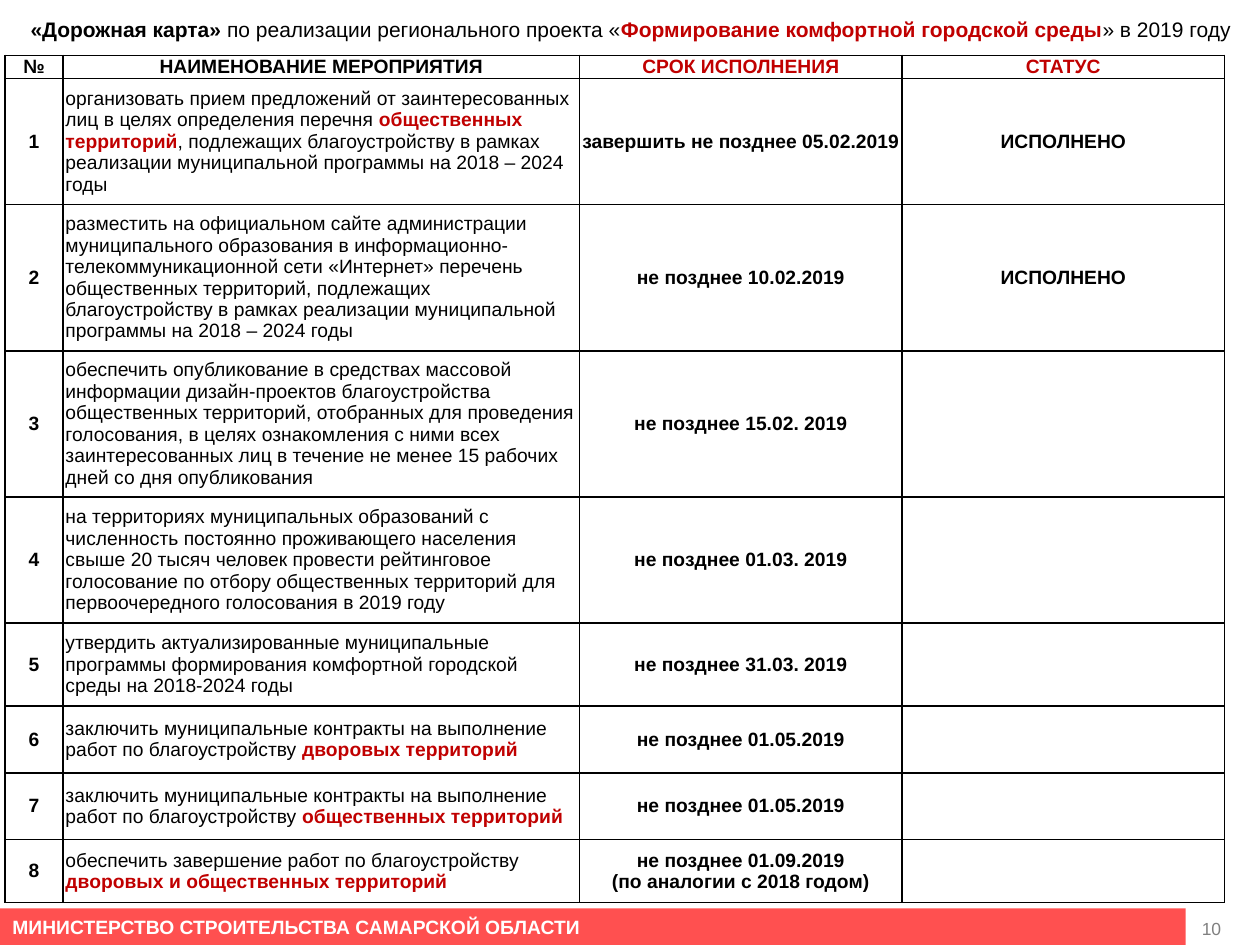
import pptx
import pptx.dml.color
import pptx.enum.shapes
import pptx.enum.text
import pptx.oxml
import pptx.oxml.ns
import pptx.util
from pptx.util import Inches

COLORS = {"black": "000000", "red": "C00000", "white": "FFFFFF", "banner": "FF5050", "gray": "808080"}
ALIGN = pptx.enum.text.PP_ALIGN
ANCHOR = pptx.enum.text.MSO_ANCHOR


def rgb(name):
    return pptx.dml.color.RGBColor.from_string(COLORS[name])


def add_span(para, text, size=11, color="black", bold=False, align=None):
    if align is not None:
        para.alignment = align
    span = para.add_run()
    span.text = text
    span.font.name = "Arial"
    span.font.size = pptx.util.Pt(size)
    span.font.bold = bold
    span.font.color.rgb = rgb(color)


deck = pptx.Presentation()
deck.slide_width = Inches(10)
deck.slide_height = Inches(7.5)
page = deck.slides.add_slide(deck.slide_layouts[6])

number_box = page.shapes.add_textbox(Inches(9.44), Inches(7.1), Inches(0.56), Inches(0.4))
number_box.text_frame.word_wrap = True
number_box.text_frame.vertical_anchor = ANCHOR.BOTTOM
add_span(number_box.text_frame.paragraphs[0], "10", size=10, color="gray")

banner = page.shapes.add_shape(
    pptx.enum.shapes.MSO_SHAPE.RECTANGLE, Inches(0), Inches(7.21), Inches(9.41), Inches(0.29))
banner.shadow.inherit = False
banner.fill.solid()
banner.fill.fore_color.rgb = rgb("banner")
banner.line.fill.background()
banner.text_frame.vertical_anchor = ANCHOR.MIDDLE
add_span(banner.text_frame.paragraphs[0], "МИНИСТЕРСТВО СТРОИТЕЛЬСТВА САМАРСКОЙ ОБЛАСТИ",
         color="white", bold=True, align=ALIGN.LEFT)

headers = ["№", "НАИМЕНОВАНИЕ МЕРОПРИЯТИЯ", "СРОК ИСПОЛНЕНИЯ", "СТАТУС"]
contracts = "заключить муниципальные контракты на выполнение работ по благоустройству "
# Vertical bars enclose the highlighted words.
tasks = [
    ("организовать прием предложений от заинтересованных лиц в целях определения перечня "
     "|общественных территорий|, подлежащих благоустройству в рамках реализации "
     "муниципальной программы на 2018 – 2024 годы",
     "завершить не позднее 05.02.2019", "ИСПОЛНЕНО"),
    ("разместить на официальном сайте администрации муниципального образования в "
     "информационно-телекоммуникационной сети «Интернет» перечень общественных территорий, "
     "подлежащих благоустройству в рамках реализации муниципальной программы на 2018 – 2024 годы",
     "не позднее 10.02.2019", "ИСПОЛНЕНО"),
    ("обеспечить опубликование в средствах массовой информации дизайн-проектов благоустройства "
     "общественных территорий, отобранных для проведения голосования, в целях ознакомления с ними "
     "всех заинтересованных лиц в течение не менее 15 рабочих дней со дня опубликования",
     "не позднее 15.02. 2019", ""),
    ("на территориях муниципальных образований с численность постоянно проживающего населения "
     "свыше 20 тысяч человек провести рейтинговое голосование по отбору общественных территорий "
     "для первоочередного голосования в 2019 году",
     "не позднее 01.03. 2019", ""),
    ("утвердить актуализированные муниципальные программы формирования комфортной городской "
     "среды на 2018-2024 годы",
     "не позднее 31.03. 2019", ""),
    (contracts + "|дворовых территорий", "не позднее 01.05.2019", ""),
    (contracts + "|общественных территорий", "не позднее 01.05.2019", ""),
    ("обеспечить завершение работ по благоустройству |дворовых и общественных территорий",
     "не позднее 01.09.2019\n(по аналогии с 2018 годом)", ""),
]
rows = [headers] + [[str(index), *task] for index, task in enumerate(tasks, 1)]
column_widths = [0.46, 4.1, 2.56, 2.56]
row_heights = [0.18, 1, 1.16, 1.16, 1, 0.66, 0.53, 0.53, 0.5]

table = page.shapes.add_table(len(rows), len(headers), Inches(0.04), Inches(0.44),
                              Inches(sum(column_widths)), Inches(sum(row_heights))).table
for column, width in zip(table.columns, column_widths):
    column.width = Inches(width)
for row, height in zip(table.rows, row_heights):
    row.height = Inches(height)

for row_index, row in enumerate(rows):
    for column_index, text in enumerate(row):
        cell = table.cell(row_index, column_index)
        cell.vertical_anchor = ANCHOR.MIDDLE
        cell.margin_left = cell.margin_right = Inches(0.02)
        cell.margin_top = cell.margin_bottom = 0
        properties = cell._tc.get_or_add_tcPr()
        for side in ("lnL", "lnR", "lnT", "lnB"):
            properties.append(pptx.oxml.parse_xml(
                f'<a:{side} {pptx.oxml.ns.nsdecls("a")} w="12700"><a:solidFill>'
                f'<a:srgbClr val="{COLORS["black"]}"/></a:solidFill></a:{side}>'))
        cell.fill.solid()
        cell.fill.fore_color.rgb = rgb("white")
        is_header = row_index == 0
        is_task = column_index == 1 and not is_header
        for line_index, line in enumerate(text.split("\n") if text else []):
            frame = cell.text_frame
            para = frame.add_paragraph() if line_index else frame.paragraphs[0]
            for part_index, part in enumerate(line.split("|")):
                highlighted = part_index % 2 == 1
                add_span(para, part, bold=highlighted or not is_task,
                         color="red" if highlighted or is_header and column_index > 1 else "black",
                         align=ALIGN.LEFT if is_task else ALIGN.CENTER)

title_box = page.shapes.add_textbox(Inches(-0.28), Inches(0.08), Inches(10.57), Inches(0.5))
title_box.text_frame.word_wrap = True
title_box.text_frame.vertical_anchor = ANCHOR.TOP
title = title_box.text_frame.paragraphs[0]
for text, color, bold in [
    ("«Дорожная карта» ", "black", True),
    ("по реализации регионального проекта «", "black", False),
    ("Формирование комфортной городской среды", "red", True),
    ("» в 2019 году", "black", False),
]:
    add_span(title, text, size=12, color=color, bold=bold, align=ALIGN.CENTER)

deck.save("out.pptx")
